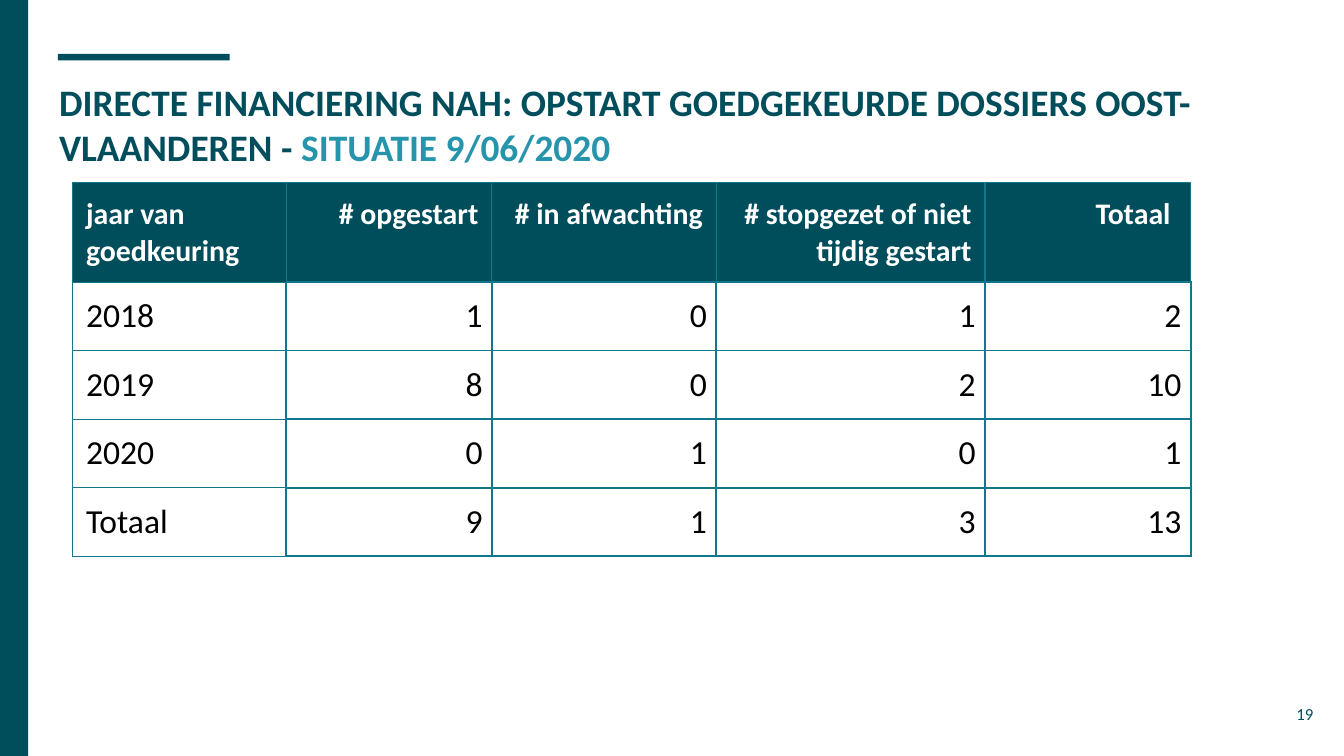
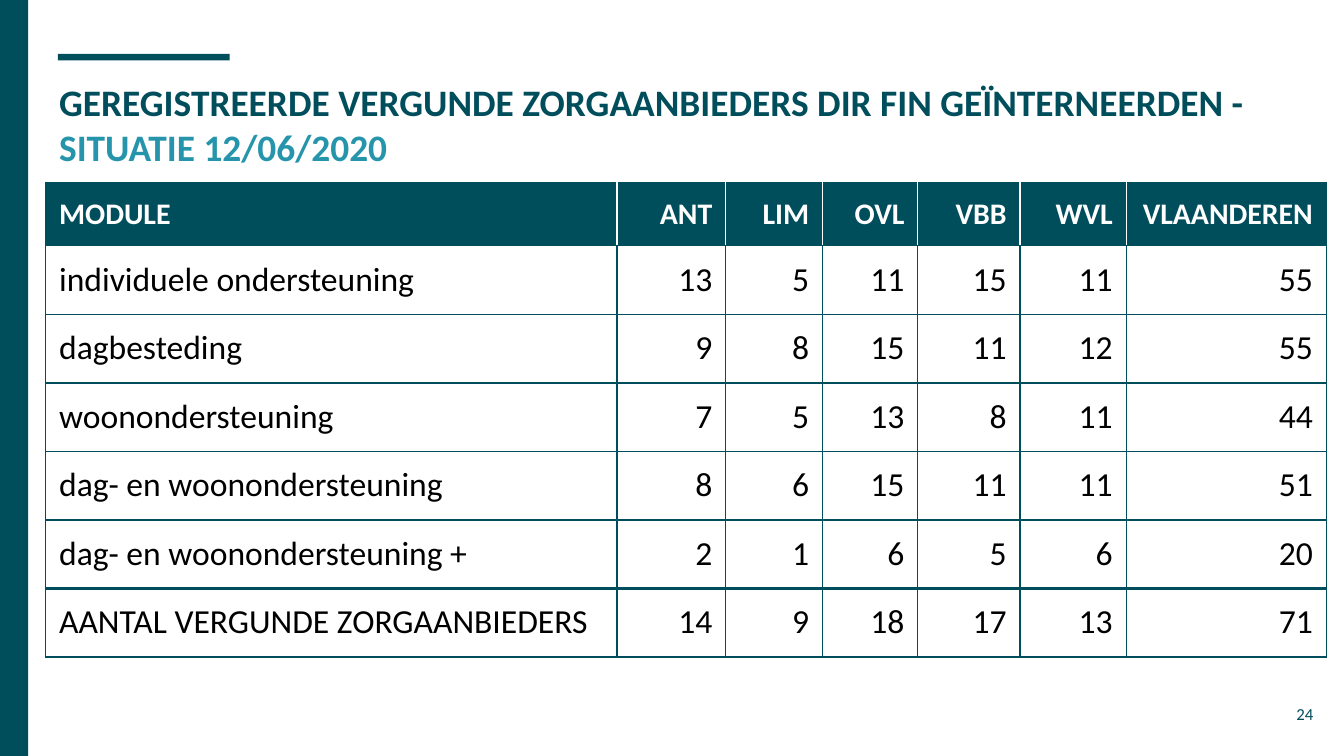
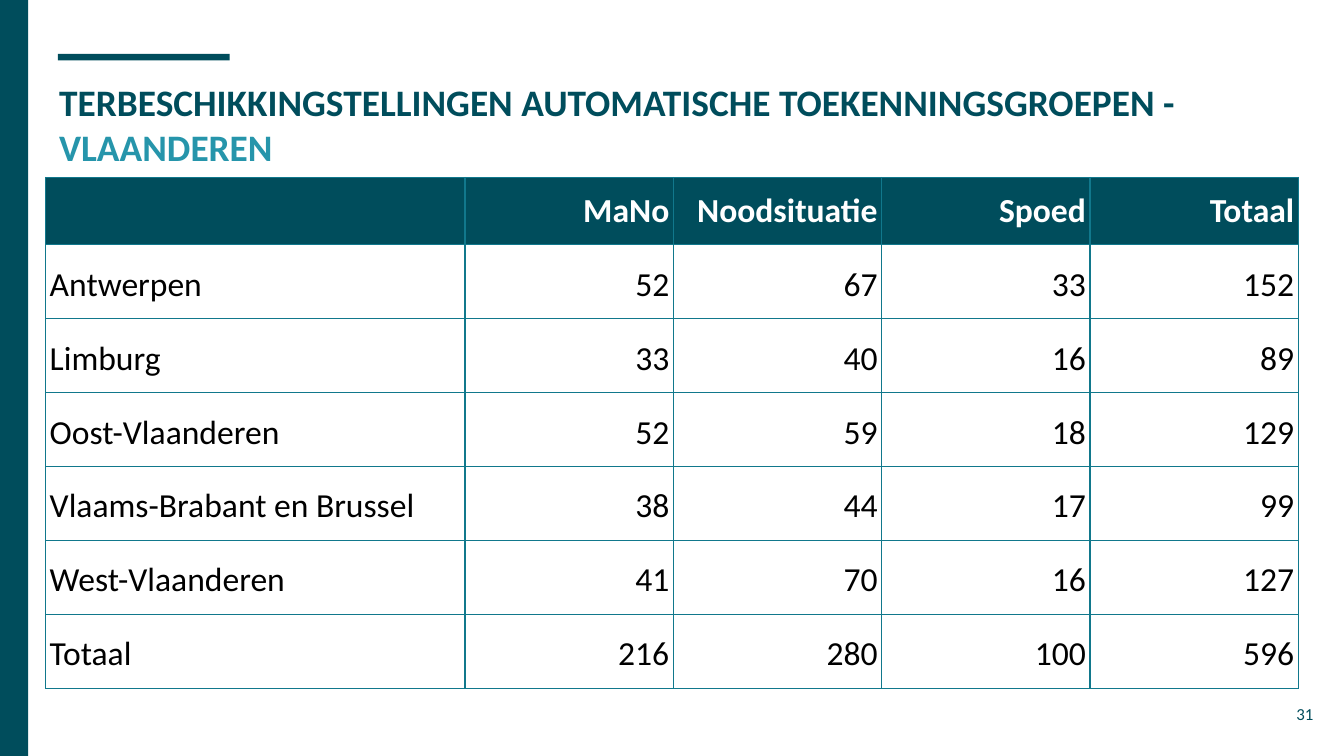
from pptx import Presentation
from pptx.dml.color import RGBColor
from pptx.enum.shapes import MSO_SHAPE
from pptx.enum.text import MSO_ANCHOR, MSO_AUTO_SIZE, PP_ALIGN
from pptx.oxml.ns import qn
from pptx.util import Inches, Pt
from lxml import etree

RECTANGLE = MSO_SHAPE.RECTANGLE
TOP, MIDDLE, BOTTOM = MSO_ANCHOR.TOP, MSO_ANCHOR.MIDDLE, MSO_ANCHOR.BOTTOM
LEFT, RIGHT = PP_ALIGN.LEFT, PP_ALIGN.RIGHT
NO_AUTOFIT = MSO_AUTO_SIZE.NONE

FONT = "Calibri"
DARK, ACCENT, GRID = "004D5C", "2695AB", "11788C"
WHITE, BLACK = "FFFFFF", "000000"
WIDTH = 10
HEIGHT = WIDTH * 9 / 16
BANDS = [(0.43, 0.4, 1.28, 0.05), (0, 0, 0.21, HEIGHT)]
TITLE_ONLY = 5

PAGES = [
    {
        "title": "DIRECTE FINANCIERING NAH: OPSTART GOEDGEKEURDE DOSSIERS OOST-VLAANDEREN - ",
        "highlight": "SITUATIE 9/06/2020",
        "number": "19",
        "title_height": 0.63,
        "left": 0.54, "top": 1.36,
        "columns": [1.59, 1.53, 1.67, 2, 1.53],
        "header_height": 0.74, "row_height": 0.51,
        "header_size": 16, "header_inset": 0.1,
        "label_inset": 0.1, "value_inset": 0.07,
        "anchor": TOP, "spacing": 1,
        "grid": GRID, "value_line": 1, "divider": GRID, "total_line": None,
        "rows": [
            ("jaar van goedkeuring", "# opgestart", "# in afwachting",
             "# stopgezet of niet tijdig gestart", "Totaal "),
            ("2018", 1, 0, 1, 2),
            ("2019", 8, 0, 2, 10),
            ("2020", 0, 1, 0, 1),
            ("Totaal", 9, 1, 3, 13),
        ],
    },
    {
        "title": "GEREGISTREERDE VERGUNDE ZORGAANBIEDERS DIR FIN GEÏNTERNEERDEN - ",
        "highlight": "SITUATIE 12/06/2020",
        "number": "24",
        "title_height": 0.63,
        "left": 0.34, "top": 1.36,
        "columns": [4.25, 0.81, 0.72, 0.71, 0.76, 0.79, 1.49],
        "header_height": 0.47, "row_height": 0.51,
        "header_size": 16, "header_inset": 0.1,
        "label_inset": 0.1, "value_inset": 0.1,
        "anchor": TOP, "spacing": 1,
        "grid": DARK, "value_line": 0.75, "divider": WHITE, "total_line": 2.25,
        "rows": [
            ("MODULE", "ANT", "LIM", "OVL", "VBB", "WVL", "VLAANDEREN"),
            ("individuele ondersteuning", 13, 5, 11, 15, 11, 55),
            ("dagbesteding", 9, 8, 15, 11, 12, 55),
            ("woonondersteuning", 7, 5, 13, 8, 11, 44),
            ("dag- en woonondersteuning", 8, 6, 15, 11, 11, 51),
            ("dag- en woonondersteuning +", 2, 1, 6, 5, 6, 20),
            ("AANTAL VERGUNDE ZORGAANBIEDERS", 14, 9, 18, 17, 13, 71),
        ],
    },
    {
        "title": "TERBESCHIKKINGSTELLINGEN AUTOMATISCHE TOEKENNINGSGROEPEN - ",
        "highlight": "VLAANDEREN",
        "number": "31",
        "title_height": 0.83,
        "left": 0.34, "top": 1.32,
        "columns": [3.12, 1.55, 1.55, 1.55, 1.55],
        "header_height": 0.5, "row_height": 0.55,
        "header_size": 18, "header_inset": 0.03,
        "label_inset": 0.03, "value_inset": 0.03,
        "anchor": BOTTOM, "spacing": 1.15,
        "grid": GRID, "value_line": 0.75, "divider": GRID, "total_line": None,
        "rows": [
            ("", "MaNo", "Noodsituatie", "Spoed", "Totaal"),
            ("Antwerpen", 52, 67, 33, 152),
            ("Limburg", 33, 40, 16, 89),
            ("Oost-Vlaanderen", 52, 59, 18, 129),
            ("Vlaams-Brabant en Brussel", 38, 44, 17, 99),
            ("West-Vlaanderen", 41, 70, 16, 127),
            ("Totaal", 216, 280, 100, 596),
        ],
    },
]


def write(holder, text, size=18, color=BLACK, bold=False, align=LEFT,
          anchor=TOP, inset=0.1, spacing=1):
    holder.vertical_anchor = anchor
    holder.margin_left = holder.margin_right = Inches(inset)
    holder.margin_top = holder.margin_bottom = Inches(0.1)
    frame = getattr(holder, "text_frame", holder)
    frame.word_wrap = True
    para = frame.paragraphs[0]
    para.alignment = align
    para.line_spacing = spacing
    if text:
        span = para.add_run()
        span.text = text
        span.font.name = FONT
        span.font.size = Pt(size)
        span.font.bold = bold
        span.font.color.rgb = RGBColor.from_string(color)


def draw_border(cell, side, color, width):
    properties = cell._tc.get_or_add_tcPr()
    line = etree.SubElement(properties, qn(f"a:ln{side}"), w=str(Pt(width)))
    fill = etree.SubElement(line, qn("a:solidFill"))
    etree.SubElement(fill, qn("a:srgbClr"), val=color)


deck = Presentation()
deck.slide_width = Inches(WIDTH)
deck.slide_height = Inches(HEIGHT)

for content in PAGES:
    page = deck.slides.add_slide(deck.slide_layouts[TITLE_ONLY])

    for area in BANDS:
        band = page.shapes.add_shape(RECTANGLE, *map(Inches, area))
        band.shadow.inherit = False
        band.fill.solid()
        band.fill.fore_color.rgb = RGBColor.from_string(DARK)
        band.line.fill.background()

    title = page.shapes.title
    title.left, title.top = Inches(0.34), Inches(0.49)
    title.width, title.height = Inches(9.32), Inches(content["title_height"])
    title.text_frame.auto_size = NO_AUTOFIT
    write(title.text_frame, content["title"], size=20, color=DARK, bold=True)
    write(title.text_frame, content["highlight"], size=20, color=ACCENT, bold=True)

    number = page.shapes.add_textbox(Inches(9.27), Inches(5.1), Inches(0.6), Inches(0.43))
    write(number.text_frame, content["number"], size=9, color=DARK, align=RIGHT, anchor=MIDDLE)

    rows, columns = content["rows"], content["columns"]
    heights = [content["header_height"]] + [content["row_height"]] * (len(rows) - 1)
    table = page.shapes.add_table(
        len(rows), len(columns), Inches(content["left"]), Inches(content["top"]),
        Inches(sum(columns)), Inches(sum(heights))).table
    table.first_row = table.horz_banding = False
    for column, width in zip(table.columns, columns):
        column.width = Inches(width)
    for row, height in zip(table.rows, heights):
        row.height = Inches(height)

    last_row, last_column = len(rows) - 1, len(columns) - 1
    for r, values in enumerate(rows):
        for c, value in enumerate(values):
            cell = table.cell(r, c)
            align = RIGHT if c else LEFT
            if r == 0:
                write(cell, value, size=content["header_size"], color=WHITE, bold=True,
                      align=align, inset=content["header_inset"])
            else:
                write(cell, str(value), align=align, anchor=content["anchor"],
                      inset=content["value_inset" if c else "label_inset"],
                      spacing=content["spacing"])

            weight = content["value_line"] if r and c else 0.75
            borders = {side: (content["grid"], weight) for side in "LRTB"}
            if r == 0 and c > 0:
                borders["L"] = (content["divider"], 0.75)
                borders["B"] = (content["grid"], content["value_line"])
            if r == 0 and c < last_column:
                borders["R"] = (content["divider"], 0.75)
            if r and c == 0:
                borders["R"] = (content["grid"], content["value_line"])
            if content["total_line"] and r >= last_row - 1:
                borders["T" if r == last_row else "B"] = (content["grid"], content["total_line"])
            for side, (color, width) in borders.items():
                draw_border(cell, side, color, width)

            if r == 0:
                cell.fill.solid()
                cell.fill.fore_color.rgb = RGBColor.from_string(DARK)
            else:
                cell.fill.background()

deck.save("out.pptx")
